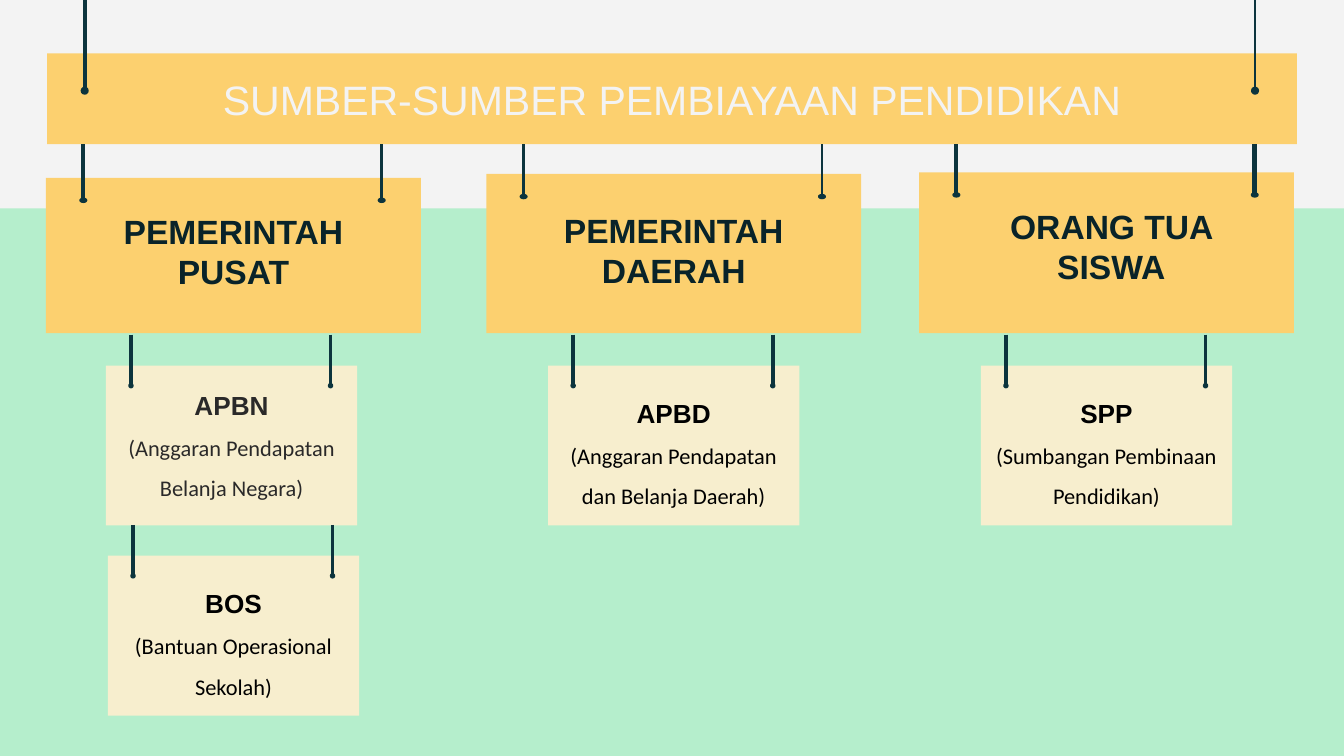
"""Build a slide of hanging signs showing where education funding comes from."""
import pptx
import pptx.dml.color
import pptx.enum.shapes
import pptx.enum.text
import pptx.oxml
import pptx.util

COLOURS = {
    "wall": "F3F3F3", "floor": "B5EECC", "sign": "FCD06F", "card": "F7EECE",
    "cord": "0C343D", "heading": "092329", "soft": "2A2929", "black": "000000",
}
RGB = {name: pptx.dml.color.RGBColor.from_string(value) for name, value in COLOURS.items()}
ANCHOR = pptx.enum.text.MSO_ANCHOR
SHAPE = pptx.enum.shapes.MSO_SHAPE
CELL = pptx.util.Inches(0.1)


def cells(*counts):
    return [round(count * CELL) for count in counts]


def write_sign(shape, fill, box, anchor, margins, lines):
    shape.left, shape.top, shape.width, shape.height = cells(*box)
    shape.fill.solid()
    shape.fill.fore_color.rgb = RGB[fill]
    shape.line.fill.background()
    frame = shape.text_frame
    left, top, right, bottom = cells(*margins)
    settings = {
        "word_wrap": True, "auto_size": pptx.enum.text.MSO_AUTO_SIZE.NONE,
        "vertical_anchor": anchor, "margin_left": left, "margin_top": top,
        "margin_right": right, "margin_bottom": bottom,
    }
    for name, value in settings.items():
        setattr(frame, name, value)
    for index, (text, font, size, bold, colour, spacing) in enumerate(lines):
        paragraph = frame.add_paragraph() if index else frame.paragraphs[0]
        paragraph.text = text
        paragraph.alignment = pptx.enum.text.PP_ALIGN.CENTER
        paragraph.line_spacing = spacing
        paragraph.space_before = pptx.util.Pt(0)
        for run in paragraph.runs:
            for name, value in {"name": font, "size": pptx.util.Pt(size), "bold": bold}.items():
                setattr(run.font, name, value)
            run.font.color.rgb = RGB[colour]


presentation = pptx.Presentation()
presentation.slide_width, presentation.slide_height = cells(100, 56.25)
slide = presentation.slides.add_slide(presentation.slide_layouts[0])
slide.background.fill.solid()
slide.background.fill.fore_color.rgb = RGB["wall"]
shapes = slide.shapes

floor = shapes.add_shape(SHAPE.RECTANGLE, *cells(0, 15.5, 100, 40.75))
floor.shadow.inherit = False
floor.fill.solid()
floor.fill.fore_color.rgb = RGB["floor"]
floor.line.fill.background()
shapes.element.insert(2, floor.element)

write_sign(shapes.title, "sign", (3.5, 3.97, 93, 6.75), ANCHOR.MIDDLE, (1, 1, 1, 1),
           [("SUMBER-SUMBER PEMBIAYAAN PENDIDIKAN", "Arial", 22, False, "wall", 1)])
cords = [(6.3, 0, 6.75, 0.5, 2.2), (93.38, 0, 6.75, 0.5, 1.3)]

headings = [
    ("PEMERINTAH\vPUSAT", 3.42, 13.23, (1, 1, 1, 3.1), (2, 1.3)),
    ("PEMERINTAH\vDAERAH", 36.18, 12.95, (1, 1, 1, 3.2), (2, 1.5)),
    ("ORANG TUA SISWA", 68.38, 12.83, (5.8, 1, 5.1, 3.5), (2, 2.6)),
]
for text, left, top, margins, weights in headings:
    sign = shapes.add_shape(SHAPE.RECTANGLE, 0, 0, CELL, CELL)
    sign.shadow.inherit = False
    write_sign(sign, "sign", (left, top, 27.9, 24.8 - top), ANCHOR.BOTTOM, margins,
               [(text, "Arial", 18, True, "heading", 1)])
    for offset, weight in zip((2.78, 24.98), weights):
        cords.append((left + offset, 10.75, top + 1.68, 0.3, weight))

cards = [
    ("APBN", "(Anggaran Pendapatan Belanja Negara)", 7.88, 27.2),
    ("BOS", "(Bantuan Operasional Sekolah)", 8.03, 41.35),
    ("APBD", "(Anggaran Pendapatan dan Belanja Daerah)", 40.78, 27.2),
    ("SPP", "(Sumbangan Pembinaan Pendidikan)", 72.98, 27.2),
]
for index, (name, meaning, left, top) in enumerate(cards):
    if index == 0:
        card, anchor, margins, colour = slide.placeholders[1], ANCHOR.TOP, (1, 0.6, 1, 1), "soft"
    else:
        card = shapes.add_shape(SHAPE.RECTANGLE, 0, 0, CELL, CELL)
        card.shadow.inherit = False
        anchor, margins, colour = ANCHOR.MIDDLE, (1, 1, 1, 1), "black"
    write_sign(card, "card", (left, top, 18.7, 11.9), anchor, margins,
               [(name, "Arial", 14, True, colour, 1.5),
                (meaning, "Calibri", 12, False, colour, 1.5)])
    for offset, weight in ((1.87, 2.2), (16.72, 1.9)):
        cords.append((left + offset, top - 2.3, top + 1.5, 0.3, weight))

for x, top, bottom, knob_height, weight in cords:
    cord = shapes.add_connector(pptx.enum.shapes.MSO_CONNECTOR.STRAIGHT,
                                *cells(x, top, x, bottom))
    cord.line.color.rgb = RGB["cord"]
    cord.line.width = pptx.util.Pt(weight)
    cord.element.spPr.append(pptx.oxml.parse_xml(
        '<a:effectLst xmlns:a="http://schemas.openxmlformats.org/drawingml/2006/main"/>'))
    knob_width = 0.3 if top > 20 else 0.5
    knob = shapes.add_shape(SHAPE.OVAL, *cells(
        x - knob_width / 2, bottom - knob_height / 2, knob_width, knob_height))
    knob.shadow.inherit = False
    knob.fill.solid()
    knob.fill.fore_color.rgb = knob.line.color.rgb = RGB["cord"]
    knob.line.width = pptx.util.Pt(0.75)

presentation.save("out.pptx")
